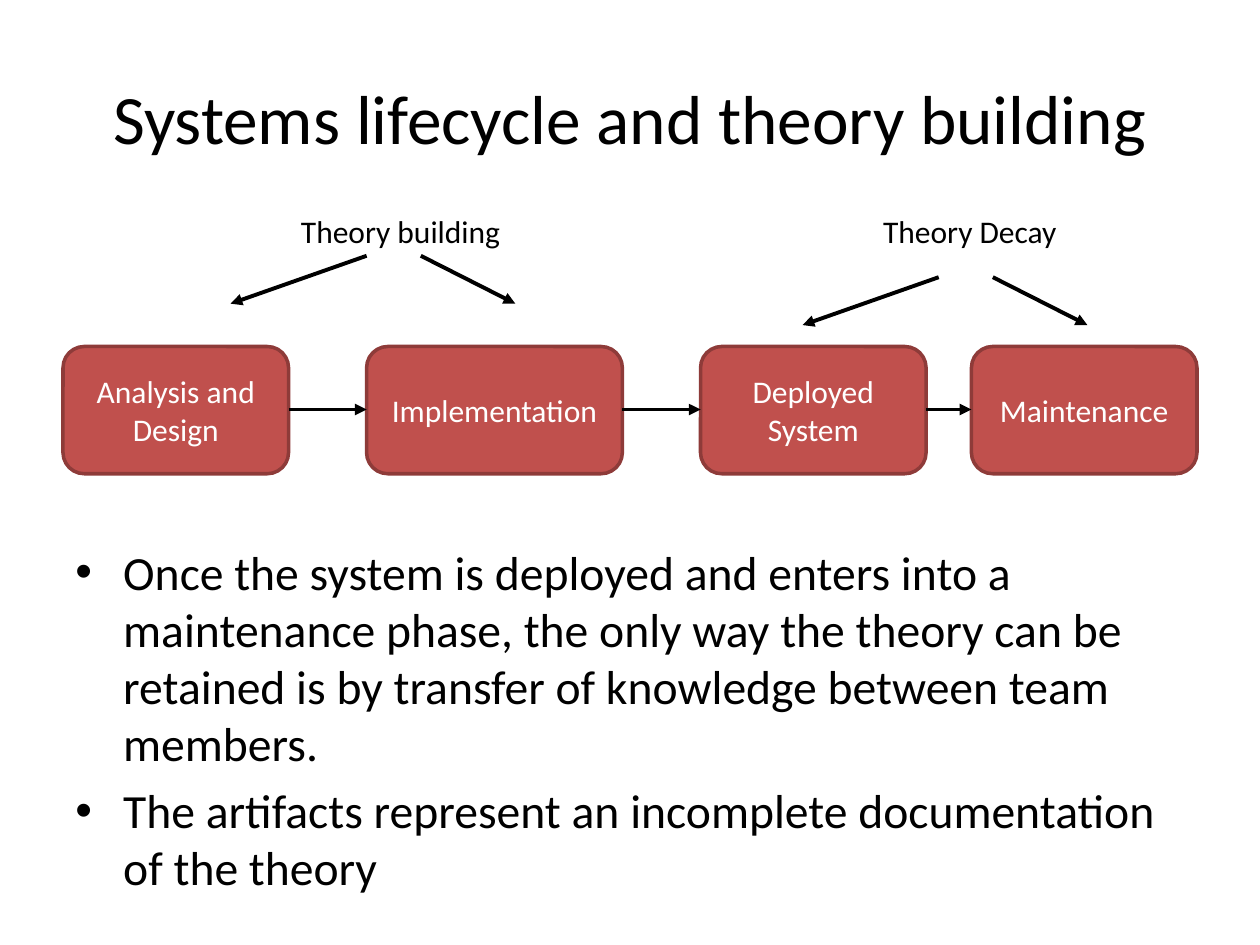
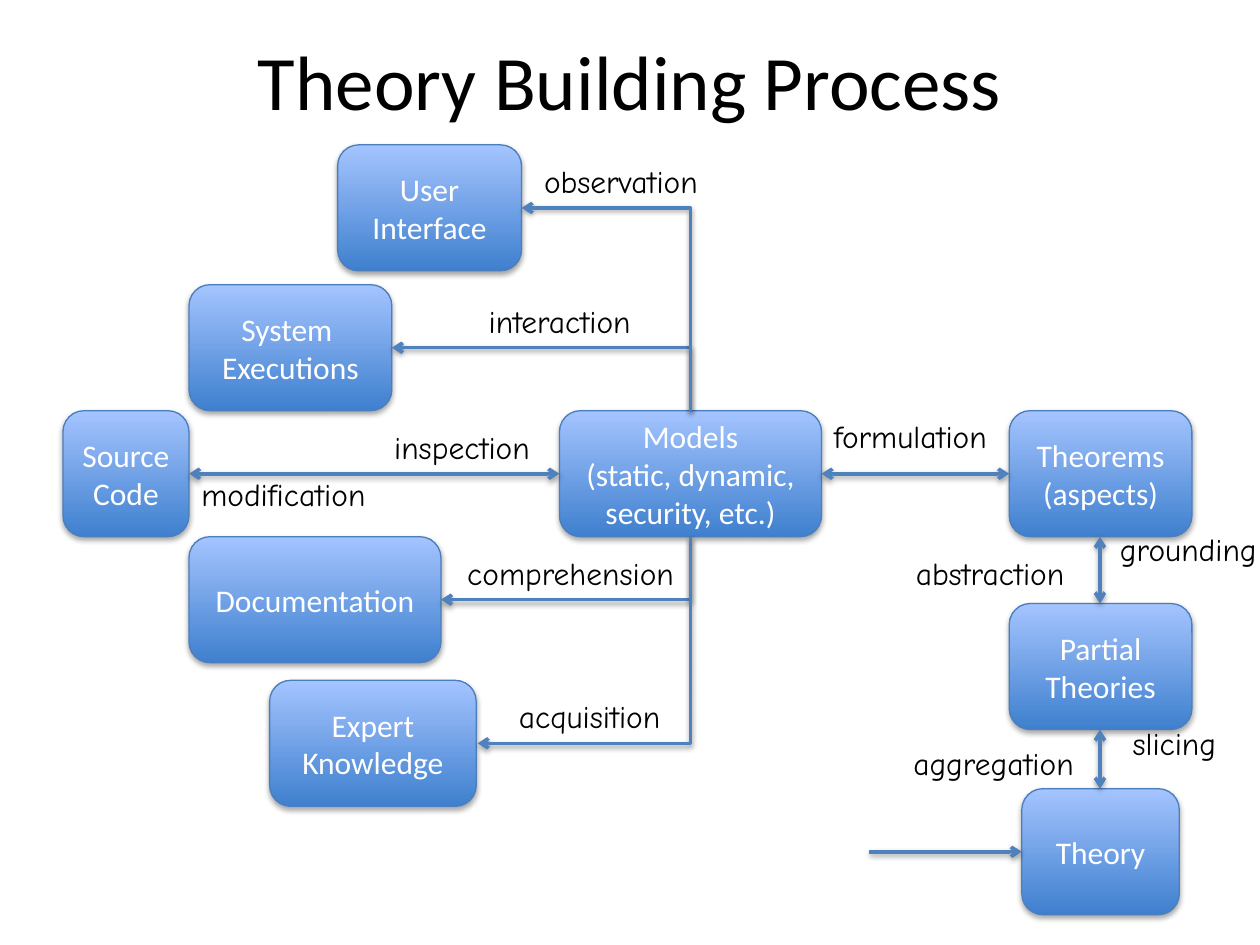
from lxml import etree
from pptx import Presentation
from pptx import util as u
from pptx.dml.color import RGBColor
from pptx.enum import shapes, text
from pptx.oxml import ns

BLACK = RGBColor(0x00, 0x00, 0x00)
WHITE = RGBColor(0xFF, 0xFF, 0xFF)
RED = RGBColor(0xC0, 0x50, 0x4D)
MAROON = RGBColor(0x8E, 0x3B, 0x39)
DEEP = RGBColor(0x3F, 0x80, 0xCE)
PALE = RGBColor(0xA4, 0xC4, 0xFF)
EDGE = RGBColor(0x4B, 0x7E, 0xBC)
BLUE = RGBColor(0x4F, 0x81, 0xBD)
LEFT, MID = text.PP_ALIGN.LEFT, text.PP_ALIGN.CENTER
ROUND = shapes.MSO_SHAPE.ROUNDED_RECTANGLE


def write(frame, words, size, color=BLACK, align=LEFT, font="Calibri", wrap=True):
    frame.word_wrap = wrap
    if align == MID:
        frame.vertical_anchor = text.MSO_ANCHOR.MIDDLE
    frame.text = words
    for para in frame.paragraphs:
        para.alignment = align
        for run in para.runs:
            run.font.size = u.Pt(size)
            run.font.name = font
            run.font.color.rgb = color


def link(slide, start, end, color, width, head=None, tail=None):
    straight = start[0] == end[0] or start[1] == end[1] or color == BLACK
    kind = shapes.MSO_CONNECTOR.STRAIGHT if straight else shapes.MSO_CONNECTOR.ELBOW
    line = slide.shapes.add_connector(kind, *map(u.Inches, start + end))
    line.line.color.rgb = color
    line.line.width = u.Pt(width)
    props = line._element.spPr
    if not straight:
        props.find(ns.qn("a:prstGeom")).set("prst", "bentConnector2")
    for tag, tip in (("a:headEnd", head), ("a:tailEnd", tail)):
        if tip:
            etree.SubElement(props.find(ns.qn("a:ln")), ns.qn(tag), type=tip)
    etree.SubElement(props, ns.qn("a:effectLst"))


deck = Presentation()
deck.slide_width, deck.slide_height = u.Inches(10), u.Inches(7.5)

# Slides and their titles
pages = []
for title, top, size in (("Systems lifecycle and theory building", 0.3, 39.6),
                         ("Theory Building Process", 0.01, 44)):
    page = deck.slides.add_slide(deck.slide_layouts[6])
    box = page.shapes.add_textbox(*map(u.Inches, (0.5, top, 9, 1.25)))
    write(box.text_frame, title, size, align=MID)
    pages.append(page)
cycle, process = pages

# Lifecycle: bullets
box = cycle.shapes.add_textbox(*map(u.Inches, (0.5, 4.26, 9, 2.44)))
write(box.text_frame,
      "Once the system is deployed and enters into a maintenance phase, the only way "
      "the theory can be retained is by transfer of knowledge between team members.\n"
      "The artifacts represent an incomplete documentation of the theory", 27.2)
for para in box.text_frame.paragraphs:
    para.space_before = u.Pt(5.44)
    props = para._p.get_or_add_pPr()
    props.set("marL", str(u.Inches(0.38)))
    props.set("indent", str(-u.Inches(0.38)))
    etree.SubElement(props, ns.qn("a:buFont"), typeface="Arial")
    etree.SubElement(props, ns.qn("a:buChar"), char="•")

# Lifecycle: row of phases, each joined to the one before
phases = (("Analysis and Design", 0.5, 1.79), ("Implementation", 2.91, 2.03),
          ("Deployed System", 5.56, 1.79), ("Maintenance", 7.71, 1.79))
last = None
for name, left, width in phases:
    box = cycle.shapes.add_shape(ROUND, *map(u.Inches, (left, 2.75, width, 1.01)))
    box.shadow.inherit = False
    box.fill.solid()
    box.fill.fore_color.rgb = RED
    box.line.color.rgb = MAROON
    box.line.width = u.Pt(2)
    write(box.text_frame, name, 18, WHITE, MID)
    if last:
        link(cycle, (last, 3.25), (left, 3.25), BLACK, 2.25, tail="triangle")
    last = left + width

# Lifecycle: theory labels with a pair of arrows below
for name, left, width, fork, top in (("Theory building", 2.29, 1.8, 2.91, 2.03),
                                     ("Theory Decay", 6.91, 1.59, 7.45, 2.2)):
    box = cycle.shapes.add_textbox(*map(u.Inches, (left, 1.63, width, 0.4)))
    write(box.text_frame, name, 18, wrap=False)
    for start, end in ((0, -1.08), (0.43, 1.18)):
        link(cycle, (fork + start, top), (fork + end, top + 0.38),
             BLACK, 2.25, tail="triangle")

# Process: boxes, all one inch high
nodes = (("Source\nCode", 0.5, 3.26, 1), ("System \nExecutions", 1.5, 2.26, 1.61),
         ("Models\n(static, dynamic, security, etc.)", 4.44, 3.26, 2.08),
         ("Expert\nKnowledge", 2.14, 5.4, 1.64), ("User\nInterface", 2.68, 1.15, 1.46),
         ("Documentation", 1.5, 4.26, 2), ("Theorems\n(aspects)", 8.01, 3.26, 1.45),
         ("Partial\nTheories", 8.01, 4.79, 1.45), ("Theory", 8.11, 6.26, 1.25))
for name, left, top, width in nodes:
    box = process.shapes.add_shape(ROUND, *map(u.Inches, (left, top, width, 1)))
    box.shadow.inherit = False
    box.fill.gradient()
    box.fill.gradient_angle = 90
    for stop, shade in zip(box.fill.gradient_stops, (DEEP, PALE)):
        stop.color.rgb = shade
    box.line.color.rgb = EDGE
    box.line.width = u.Pt(0.75)
    write(box.text_frame, name, 18, WHITE, MID)

# Process: elbows from the models to their sources
for left, top, edge in ((3.11, 2.76, 3.26), (4.14, 1.65, 3.26),
                        (3.5, 4.76, 4.26), (3.79, 5.9, 4.26)):
    link(process, (left, top), (5.48, edge), BLUE, 2, head="arrow")

# Process: straight links
for start, end in (((4.44, 3.76), (1.5, 3.76)), ((8.01, 3.76), (6.52, 3.76)),
                   ((8.73, 4.26), (8.73, 4.79)), ((8.73, 5.79), (8.73, 6.26))):
    link(process, start, end, BLUE, 2, "arrow", "arrow")
link(process, (6.9, 6.76), (8.11, 6.76), BLUE, 2, tail="arrow")

# Process: soft shadow below every box and link
for item in process.shapes:
    glow = item._element.spPr.find(ns.qn("a:effectLst"))
    if glow is not None:
        is_box = item.has_text_frame
        cast = etree.SubElement(glow, ns.qn("a:outerShdw"), blurRad="40000",
                                dist="23000" if is_box else "20000",
                                dir="5400000", rotWithShape="0")
        tint = etree.SubElement(cast, ns.qn("a:srgbClr"), val=str(BLACK))
        etree.SubElement(tint, ns.qn("a:alpha"), val="35000" if is_box else "38000")

# Process: names of the links
for name, left, top, width in (
        ("observation", 4.22, 1.24, 1.57), ("interaction", 3.78, 2.35, 1.5),
        ("inspection", 3.03, 3.35, 1.39), ("comprehension", 3.61, 4.35, 1.93),
        ("acquisition", 4.02, 5.48, 1.44), ("formulation", 6.52, 3.26, 1.56),
        ("abstraction", 7.17, 4.35, 1.56), ("aggregation", 7.15, 5.86, 1.58),
        ("slicing", 8.89, 5.7, 0.93), ("grounding", 8.79, 4.16, 1.34),
        ("modification", 1.5, 3.72, 1.66)):
    box = process.shapes.add_textbox(*map(u.Inches, (left, top, width, 0.4)))
    write(box.text_frame, name, 18, font="Comic Neue", wrap=False)

deck.save("out.pptx")
